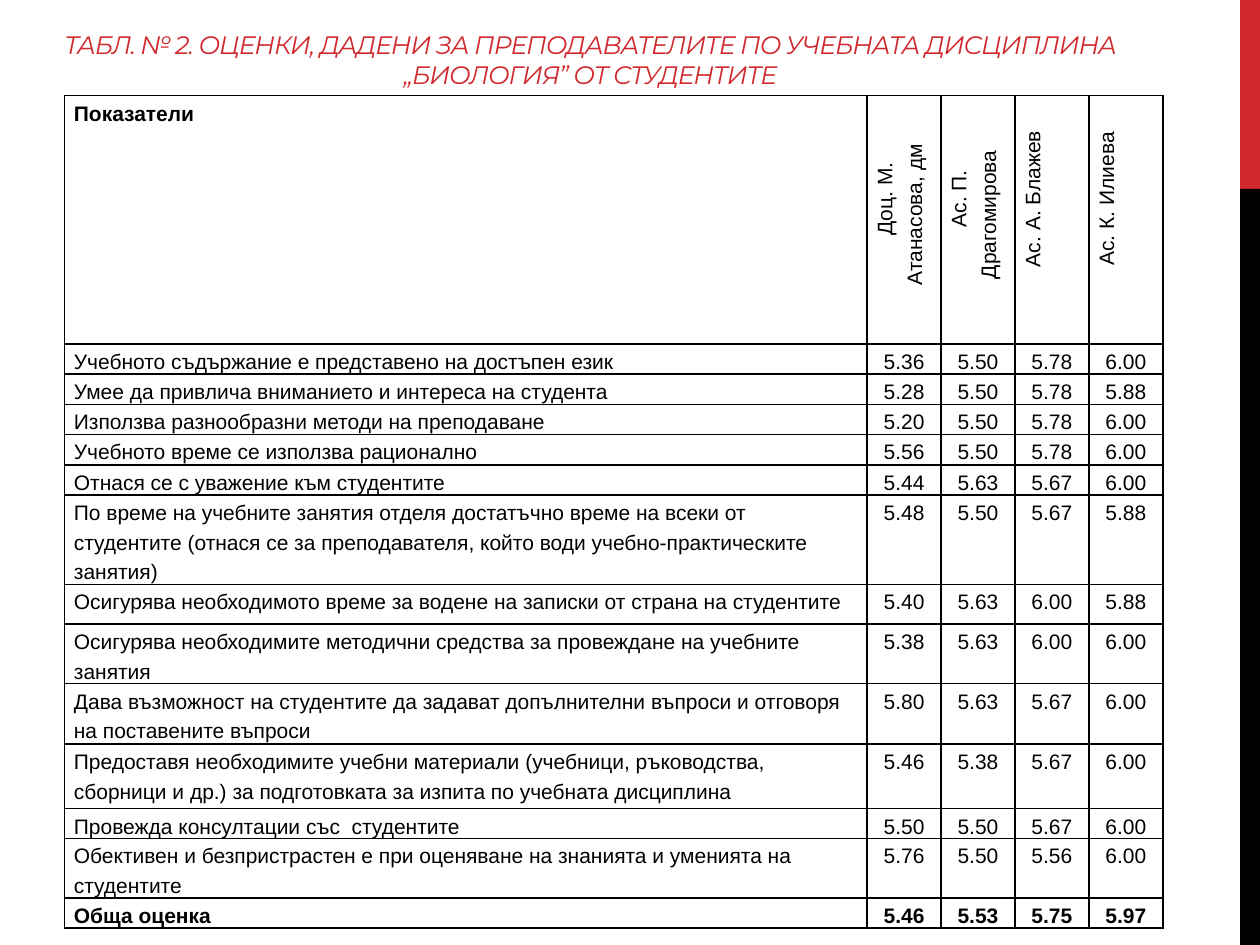
from lxml.etree import SubElement
from pptx import Presentation
from pptx.dml.color import RGBColor
from pptx.enum.shapes import MSO_SHAPE
from pptx.enum.text import MSO_ANCHOR, PP_ALIGN
from pptx.oxml.ns import qn
from pptx.util import Cm, Pt

COLORS = {"red": "D1282E", "black": "000000"}
TITLE = "ТАБЛ. № 2. ОЦЕНКИ, ДАДЕНИ ЗА ПРЕПОДАВАТЕЛИТЕ ПО УЧЕБНАТА ДИСЦИПЛИНА „БИОЛОГИЯ” ОТ СТУДЕНТИТЕ"
HEADER = ("Показатели", "Доц. М. Атанасова, дм", "Ас. П. Драгомирова", "Ас. А. Блажев", "Ас. К. Илиева")
HEADER_HEIGHT = 5
SCORE_WIDTH = 1.49
RATINGS = [
    (0.61, "Учебното съдържание е представено на достъпен език", "5.36 5.50 5.78 6.00"),
    (0.61, "Умее да привлича вниманието и интереса на студента", "5.28 5.50 5.78 5.88"),
    (0.61, "Използва разнообразни методи на преподаване", "5.20 5.50 5.78 6.00"),
    (0.61, "Учебното време се използва рационално", "5.56 5.50 5.78 6.00"),
    (0.61, "Отнася се с уважение към студентите", "5.44 5.63 5.67 6.00"),
    (1.8, "По време на учебните занятия отделя достатъчно време на всеки от студентите "
          "(отнася се за преподавателя, който води учебно-практическите занятия)", "5.48 5.50 5.67 5.88"),
    (0.8, "Осигурява необходимото време за водене на записки от страна на студентите", "5.40 5.63 6.00 5.88"),
    (1.2, "Осигурява необходимите методични средства за провеждане на учебните занятия", "5.38 5.63 6.00 6.00"),
    (1.22, "Дава възможност на студентите да задават допълнителни въпроси и отговоря "
           "на поставените въпроси", "5.80 5.63 5.67 6.00"),
    (1.3, "Предоставя необходимите учебни материали (учебници, ръководства, сборници и др.) "
          "за подготовката за изпита по учебната дисциплина", "5.46 5.38 5.67 6.00"),
    (0.6, "Провежда консултации със  студентите", "5.50 5.50 5.67 6.00"),
    (1.2, "Обективен и безпристрастен е при оценяване на знанията и уменията на студентите", "5.76 5.50 5.56 6.00"),
    (0.6, "Обща оценка", "5.46 5.53 5.75 5.97"),
]


def color(name):
    return RGBColor.from_string(COLORS[name])


def add_side_band(page, left, top, width, height):
    red_height = height / 5
    parts = (("red", top, red_height), ("black", top + red_height, height - red_height))
    for name, part_top, part_height in parts:
        bar = page.shapes.add_shape(MSO_SHAPE.RECTANGLE, Cm(left), Cm(part_top), Cm(width), Cm(part_height))
        bar.shadow.inherit = False
        bar.fill.solid()
        bar.fill.fore_color.rgb = color(name)
        bar.line.fill.background()


def add_title(page, left, top, width, height):
    box = page.shapes.add_textbox(Cm(left), Cm(top), Cm(width), Cm(height))
    frame = box.text_frame
    frame.word_wrap = True
    frame.vertical_anchor = MSO_ANCHOR.BOTTOM
    frame.text = TITLE
    para = frame.paragraphs[0]
    para.alignment = PP_ALIGN.CENTER
    span = para.runs[0]
    span.font.name = "Montserrat"
    span.font.size = Pt(14.4)
    span.font.italic = True
    span.font.color.rgb = color("red")
    span.font._element.set("spc", "-60")


def add_borders(cell):
    properties = cell._tc.get_or_add_tcPr()
    for side in ("a:lnL", "a:lnR", "a:lnT", "a:lnB"):
        line = SubElement(properties, qn(side), w=str(Pt(1)))
        fill = SubElement(line, qn("a:solidFill"))
        SubElement(fill, qn("a:srgbClr"), val=COLORS["black"])


def fill_cell(cell, text, alignment, bold):
    add_borders(cell)
    cell.fill.background()
    cell.margin_left = cell.margin_right = Cm(0.19)
    cell.margin_top = cell.margin_bottom = 0
    cell.text_frame.text = text
    para = cell.text_frame.paragraphs[0]
    para.alignment = alignment
    para.line_spacing = Pt(17)
    span = para.runs[0]
    span.font.name = "Arial"
    span.font.size = Pt(12)
    span.font.bold = bold
    span.font.color.rgb = color("black")


def turn_cell(cell):
    cell._tc.get_or_add_tcPr().set("vert", "vert270")
    properties = cell.text_frame.paragraphs[0]._p.get_or_add_pPr()
    properties.set("marL", str(Cm(0.2)))
    properties.set("indent", str(Cm(0.64)))


def add_ratings_table(page, left, top, width):
    heights = [HEADER_HEIGHT] + [height for height, _, _ in RATINGS]
    rows = [HEADER] + [(label, *scores.split()) for _, label, scores in RATINGS]
    frame = page.shapes.add_table(len(rows), len(HEADER), Cm(left), Cm(top), Cm(width), Cm(sum(heights)))
    table = frame.table
    table.first_row = table.horz_banding = False
    score_count = len(HEADER) - 1
    widths = [width - score_count * SCORE_WIDTH] + [SCORE_WIDTH] * score_count
    for column, column_width in zip(table.columns, widths):
        column.width = Cm(column_width)
    last = len(rows) - 1
    for row_index, (height, texts) in enumerate(zip(heights, rows)):
        table.rows[row_index].height = Cm(height)
        for column_index, text in enumerate(texts):
            cell = table.cell(row_index, column_index)
            is_label = column_index == 0
            bold = row_index == last or (row_index == 0 and is_label)
            fill_cell(cell, text, PP_ALIGN.LEFT if is_label else PP_ALIGN.CENTER, bold)
            if row_index == 0 and not is_label:
                turn_cell(cell)
    table.cell(0, 0).text_frame.paragraphs[0].alignment = PP_ALIGN.JUSTIFY


def main():
    deck = Presentation()
    deck.slide_width = Cm(25.4)
    deck.slide_height = Cm(19.05)
    page = deck.slides.add_slide(deck.slide_layouts[6])
    add_side_band(page, 25, 0, 0.4, 19.05)
    add_title(page, 0.5, 0.53, 22.8, 1.4)
    add_ratings_table(page, 1.3, 1.93, 22.14)
    deck.save("out.pptx")


if __name__ == "__main__":
    main()
